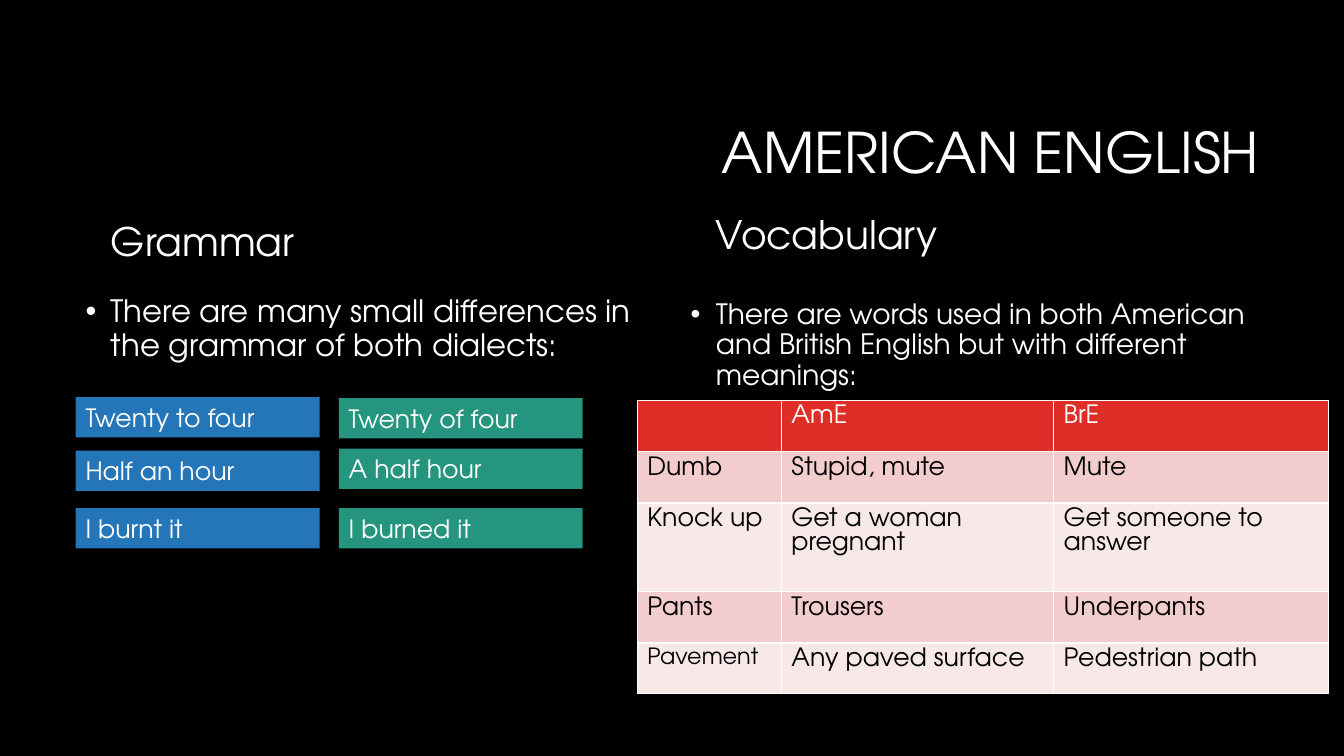
from lxml.etree import SubElement as Sub
from pptx import Presentation
from pptx.dml.color import RGBColor
from pptx.enum.shapes import MSO_SHAPE as Kind
from pptx.enum.text import MSO_ANCHOR as Anchor, MSO_AUTO_SIZE as Auto, PP_ALIGN as Align
from pptx.oxml.ns import qn
from pptx.util import Pt

PX = 9144  # 100 px to the inch
FONT = "TeX Gyre Adventor"
WHITE, BLACK, RED = "FFFFFF", "000000", "DF2E28"
BLUE, GREEN = "2476B9", "26957F"
BANDS = "F3CDCD", "F9E8E8"

PAIRS = [
    ("Twenty to four", "Twenty of four"),
    ("Half an hour", "A half hour"),
    ("I burnt it", "I burned it"),
]
WORDS = [
    ("", "AmE", "BrE"),
    ("Dumb", "Stupid, mute", "Mute"),
    ("Knock up", "Get a woman pregnant", "Get someone to answer"),
    ("Pants", "Trousers", "Underpants"),
    ("Pavement", "Any paved surface", "Pedestrian path"),
]


def px(*vals):
    return [val * PX for val in vals]


def paint(fill, color):
    fill.solid()
    fill.fore_color.rgb = RGBColor.from_string(color)


def write(frame, text, size, color=WHITE, **form):
    """Fill a text frame with one paragraph; form holds paragraph values."""
    para = frame.paragraphs[0]
    para.text = text
    form = {"alignment": Align.LEFT, "space_before": Pt(0)} | form
    for name, val in form.items():
        setattr(para, name, val)
    for name, val in {"name": FONT, "size": Pt(size), "bold": False}.items():
        setattr(para.font, name, val)
    paint(para.font.fill, color)


def hold(shape, box, text, size, anchor=Anchor.TOP, bullet=False, **form):
    """Move a placeholder to its box and fill it."""
    for name, val in zip(("left", "top", "width", "height"), px(*box)):
        setattr(shape, name, val)
    frame = shape.text_frame
    values = {"word_wrap": True, "auto_size": Auto.NONE, "vertical_anchor": anchor}
    for name, val in values.items():
        setattr(frame, name, val)
    if bullet:
        props = frame.paragraphs[0]._p.get_or_add_pPr()
        props.set("marL", str(25 * PX))
        props.set("indent", str(-25 * PX))
        Sub(props, qn("a:buChar"), char="•")
    write(frame, text, size, line_spacing=0.9, **form)


def labels(slide, left, tops, texts, color):
    """Stack one column of grammar examples."""
    for top, text in zip(tops, texts):
        rect = slide.shapes.add_shape(Kind.RECTANGLE, *px(left, top, 242, 40))
        rect.shadow.inherit = False
        rect.line.fill.background()
        paint(rect.fill, color)
        rect.text_frame.word_wrap = True
        rect.text_frame.vertical_anchor = Anchor.TOP
        write(rect.text_frame, text, 18)


def edge(cell):
    props = cell._tc.get_or_add_tcPr()
    for side in "LRTB":
        line = Sub(props, qn(f"a:ln{side}"), w=str(Pt(1)))
        Sub(Sub(line, qn("a:solidFill")), qn("a:srgbClr"), val=WHITE)


def lexis(slide, box):
    """Table of words with different meanings."""
    table = slide.shapes.add_table(len(WORDS), len(WORDS[0]), *px(*box)).table
    for col, width in zip(table.columns, px(143, 270, 273)):
        col.width = width
    for row, height in zip(table.rows, px(51, 51, 88, 51, 50)):
        row.height = height
    for r, words in enumerate(WORDS):
        for c, word in enumerate(words):
            cell = table.cell(r, c)
            edge(cell)
            paint(cell.fill, BANDS[(r - 1) % 2] if r else RED)
            size = 16 if word == "Pavement" else 18
            write(cell.text_frame, word, size, BLACK if r else WHITE)


def grammar(slide, head, body, left, top):
    hold(head, (left + 25, top, 556, 90), "Grammar", 28)
    hold(body, (left, top + 73, 581, 90),
         "There are many small differences in the grammar of both dialects:",
         22, bullet=True)
    british, american = zip(*PAIRS)
    labels(slide, left, (top + 178, top + 231, top + 288), british, BLUE)
    labels(slide, left + 261, (top + 179, top + 229, top + 288), american, GREEN)


def vocab(slide, head, body, left, top):
    hold(head, (left + 25, top, 558, 90), "Vocabulary", 28)
    hold(body, (left, top + 84, 583, 101),
         "There are words used in both American and British English "
         "but with different meanings:", 20, bullet=True)
    lexis(slide, (left - 43, top + 188, 686, 291))


def main():
    deck = Presentation()
    deck.slide_width, deck.slide_height = px(1333, 750)
    slide = deck.slides.add_slide(deck.slide_layouts[4])
    paint(slide.background.fill, BLACK)
    hold_by = {shape.placeholder_format.idx: shape for shape in slide.placeholders}
    hold(hold_by[0], (317, 83, 942, 142), "AMERICAN ENGLISH", 40,
         Anchor.MIDDLE, alignment=Align.RIGHT)
    grammar(slide, hold_by[1], hold_by[2], 75, 216)
    vocab(slide, hold_by[3], hold_by[4], 675, 209)
    for idx in (10, 11, 12):
        if idx in hold_by:
            hold_by[idx].element.getparent().remove(hold_by[idx].element)
    deck.save("out.pptx")


if __name__ == "__main__":
    main()
